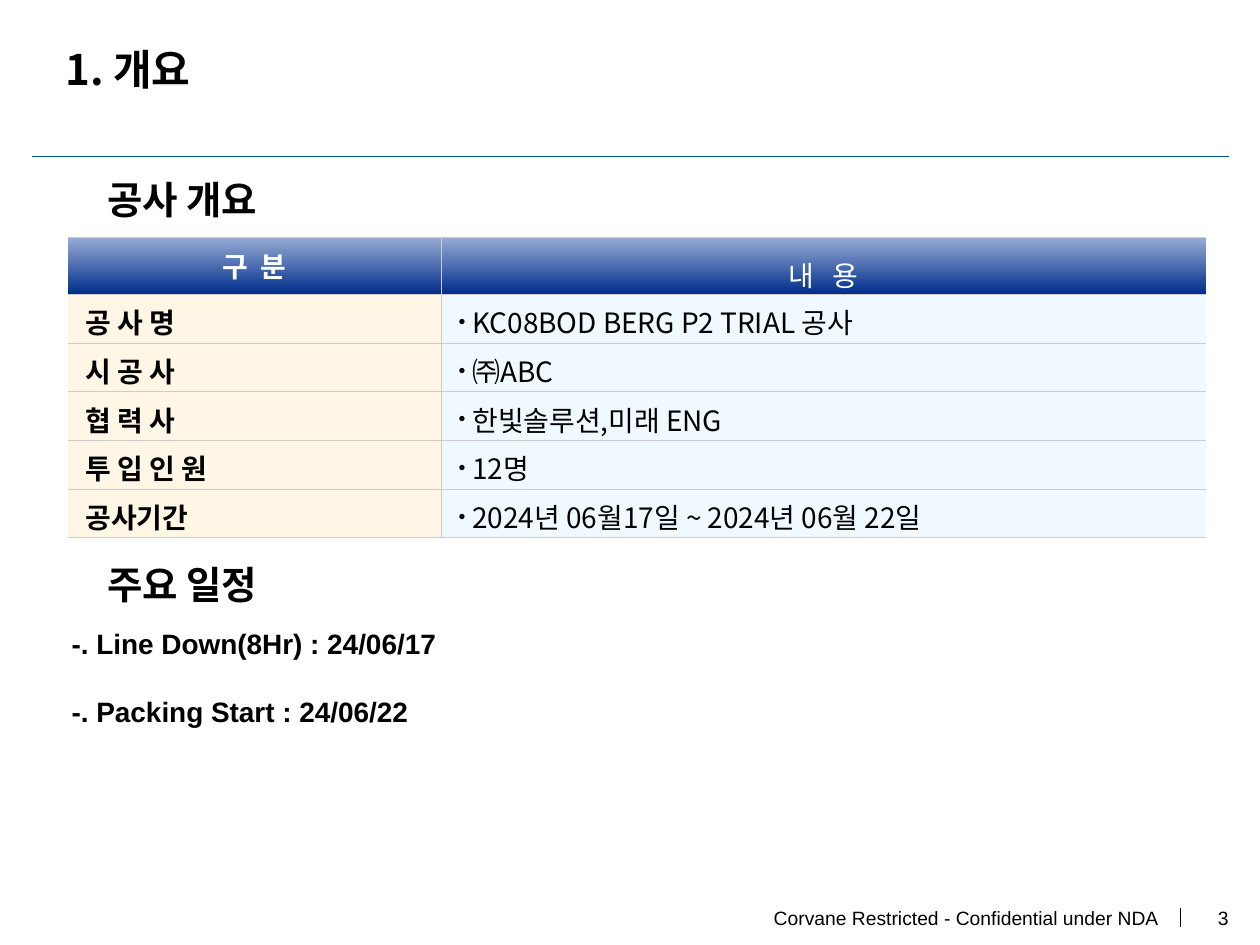
from dataclasses import dataclass

from lxml.etree import SubElement
from pptx import Presentation
from pptx.dml.color import RGBColor
from pptx.enum.shapes import MSO_CONNECTOR
from pptx.enum.text import MSO_ANCHOR, PP_ALIGN
from pptx.oxml import parse_xml
from pptx.oxml.ns import nsdecls, qn
from pptx.util import Inches, Pt


@dataclass(frozen=True)
class Theme:
    latin: str = "Arial"
    korean: str = "Noto Sans CJK KR"
    ink: str = "000000"
    white: str = "FFFFFF"
    rule: str = "005293"
    grid: str = "CCCCCC"
    header_top: str = "99ADD6"
    header_bottom: str = "002E8B"
    label_fill: str = "FFF6E5"
    value_fill: str = "EFF9FF"
    title: int = 24
    heading: int = 22
    body: int = 16
    footer: int = 11


class Deck:
    def __init__(self, theme):
        self.theme = theme
        self.prs = Presentation()
        self.prs.slide_width, self.prs.slide_height = Inches(10), Inches(7.5)
        self.s = self.prs.slides.add_slide(self.prs.slide_layouts[6])

    def style(self, p, size, font, color=None, bold=False):
        for r in p.runs:
            r.font.size, r.font.bold, r.font.name = Pt(size), bold, font
            r.font.color.rgb = RGBColor.from_string(color or self.theme.ink)
            SubElement(r.font._element, qn("a:ea")).set("typeface", font)

    def text(self, box, lines, size, font, bold=False, align=PP_ALIGN.LEFT,
             anchor=MSO_ANCHOR.TOP, inset=(0, 0), gap=0):
        tf = self.s.shapes.add_textbox(*map(Inches, box)).text_frame
        tf.word_wrap, tf.vertical_anchor = True, anchor
        tf.margin_left = tf.margin_right = Inches(inset[0])
        tf.margin_top = tf.margin_bottom = Inches(inset[1])
        tf.text = "\n".join(lines)
        for i, p in enumerate(tf.paragraphs):
            p.alignment = align
            if i:
                p.space_before = Pt(gap)
            self.style(p, size, font, bold=bold)

    def line(self, start, end, color, width):
        ends = map(Inches, (*start, *end))
        sp = self.s.shapes.add_connector(MSO_CONNECTOR.STRAIGHT, *ends)
        sp.line.color.rgb, sp.line.width = RGBColor.from_string(color), Pt(width)
        SubElement(sp._element.spPr, qn("a:effectLst"))

    def borders(self, cell, sides):
        """Borders must precede the fill, in the order L, R, T, B."""
        tc_pr = cell._tc.get_or_add_tcPr()
        for i, side in enumerate(sides):
            tc_pr.insert(i, parse_xml(
                f'<a:ln{side} {nsdecls("a")} w="3175"><a:solidFill>'
                f'<a:srgbClr val="{self.theme.grid}"/></a:solidFill></a:ln{side}>'))

    def bullet(self, p):
        p_pr = p._p.get_or_add_pPr()
        indent = Inches(0.11)
        p_pr.set("marL", str(indent))
        p_pr.set("indent", str(-indent))
        SubElement(p_pr, qn("a:buSzPct")).set("val", "70000")
        SubElement(p_pr, qn("a:buFont")).set("typeface", self.theme.latin)
        SubElement(p_pr, qn("a:buChar")).set("char", "•")

    def fill(self, cell, *colors):
        """One colour fills solid; two run from top to bottom."""
        if len(colors) == 1:
            cell.fill.solid()
            cell.fill.fore_color.rgb = RGBColor.from_string(colors[0])
            return
        cell.fill.gradient()
        cell.fill.gradient_angle = 270
        for stop, color in zip(cell.fill.gradient_stops, colors):
            stop.color.rgb = RGBColor.from_string(color)

    def table(self, box, rows, widths, heights):
        t = self.theme
        table = self.s.shapes.add_table(
            len(rows), len(widths), *map(Inches, box)).table
        style_id = table._tbl.tblPr.find(qn("a:tableStyleId"))
        style_id.text = "{2D5ABB26-0587-4C30-8999-92F81FD0307C}"
        for column, width in zip(table.columns, widths):
            column.width = Inches(width)
        for i, (row, height) in enumerate(zip(rows, heights)):
            table.rows[i].height = Inches(height)
            for j, value in enumerate(row):
                header, label = i == 0, j == 0
                cell = table.cell(i, j)
                cell.vertical_anchor = MSO_ANCHOR.MIDDLE
                cell.margin_left = cell.margin_right = Inches(0.14)
                cell.margin_top = cell.margin_bottom = Inches(0.06)
                cell.text = value
                p = cell.text_frame.paragraphs[0]
                if header:
                    p.alignment = PP_ALIGN.CENTER
                    if not label:
                        p.line_spacing = 1.25
                    self.fill(cell, t.header_top, t.header_bottom)
                else:
                    p.alignment = PP_ALIGN.JUSTIFY if label else PP_ALIGN.LEFT
                    if not label:
                        self.bullet(p)
                    self.fill(cell, t.label_fill if label else t.value_fill)
                self.style(p, t.body, t.korean, t.white if header else t.ink, label)
                self.borders(cell, "RTB" if label else "LTB")


def main():
    t = Theme()
    d = Deck(t)
    d.line((0.25, 1.24), (9.75, 1.24), t.rule, 0.75)
    d.text((9.24, 7.14, 0.51, 0.29), ["3"], t.footer, t.latin,
           align=PP_ALIGN.RIGHT, anchor=MSO_ANCHOR.MIDDLE)
    d.line((9.37, 7.21), (9.37, 7.36), t.ink, 1)
    d.text((5.2, 7.14, 4, 0.29), ["Corvane Restricted - Confidential under NDA"],
           t.footer, t.latin, align=PP_ALIGN.RIGHT, anchor=MSO_ANCHOR.MIDDLE)

    d.text((0.42, 0.29, 2.52, 0.51), ["1. 개요"], t.title, t.korean, True,
           anchor=MSO_ANCHOR.MIDDLE, inset=(0.1, 0.05))
    rows = [
        ("구  분", "내   용"),
        ("공 사 명", "KC08BOD BERG P2 TRIAL 공사"),
        ("시 공 사", "㈜ABC"),
        ("협 력 사", "한빛솔루션,미래 ENG"),
        ("투 입 인 원", "12명"),
        ("공사기간", "2024년 06월17일 ~ 2024년 06월 22일"),
    ]
    heights = [0.45] + [0.385] * 5
    d.table((0.54, 1.88, 9.03, sum(heights)), rows, (2.96, 6.07), heights)
    for top, heading in ((1.4, "공사 개요"), (4.45, "주요 일정")):
        d.text((0.85, top, 2.3, 0.37), [heading], t.heading, t.korean, True)
    d.text((0.47, 4.92, 8.36, 0.91),
           ["-. Line Down(8Hr) : 24/06/17", "-. Packing Start : 24/06/22"],
           t.body, t.latin, True, inset=(0.1, 0.05), gap=20)
    d.prs.save("out.pptx")


if __name__ == "__main__":
    main()
